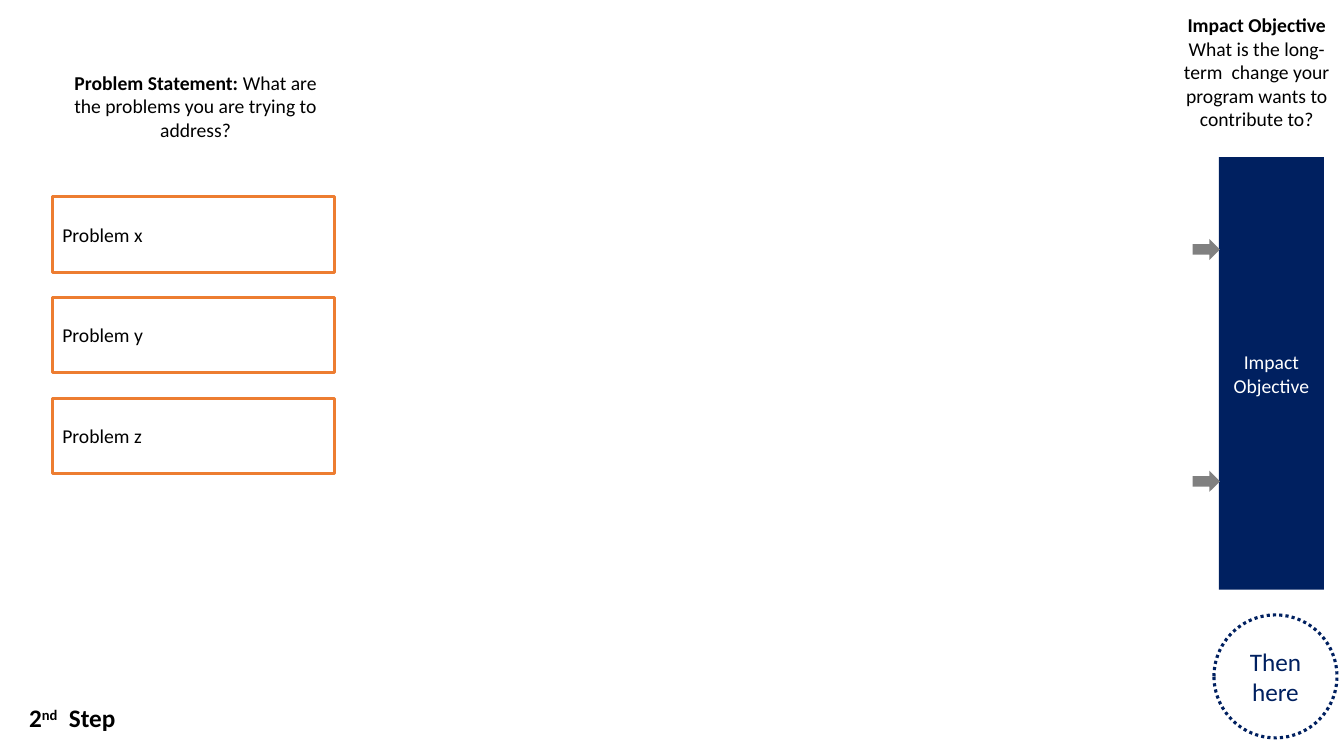
import dataclasses

import pptx
import pptx.dml.color
import pptx.enum.dml
import pptx.enum.shapes
import pptx.enum.text
import pptx.util

Inches = pptx.util.Inches
Shape = pptx.enum.shapes.MSO_SHAPE
Align = pptx.enum.text.PP_ALIGN
Anchor = pptx.enum.text.MSO_ANCHOR


@dataclasses.dataclass(frozen=True)
class Theme:
    font: str = "Calibri"
    navy: str = "002060"
    orange: str = "ED7D31"
    grey: str = "808080"
    black: str = "000000"
    white: str = "FFFFFF"
    body: int = 14
    large: int = 18
    outline: float = 2.25


THEME = Theme()


def rgb(value):
    return pptx.dml.color.RGBColor.from_string(value)


def write(box, spans, size, color, align):
    """Fill a box with one paragraph of (text, bold) spans and return its runs."""
    box.text_frame.word_wrap = True
    para = box.text_frame.paragraphs[0]
    para.alignment = align
    for text, bold in spans:
        span = para.add_run()
        span.text = text
        span.font.name = THEME.font
        span.font.size = pptx.util.Pt(size)
        span.font.bold = bold
        span.font.color.rgb = rgb(color)
    return para.runs


def add_label(page, left, top, width, height, spans, size, align):
    box = page.shapes.add_textbox(Inches(left), Inches(top), Inches(width), Inches(height))
    return write(box, spans, size, THEME.black, align)


def add_block(page, kind, left, top, width, height, fill=None, line=None):
    box = page.shapes.add_shape(kind, Inches(left), Inches(top), Inches(width), Inches(height))
    box.shadow.inherit = False
    box.text_frame.vertical_anchor = Anchor.MIDDLE
    if fill:
        box.fill.solid()
        box.fill.fore_color.rgb = rgb(fill)
    else:
        box.fill.background()
    if line:
        box.line.color.rgb = rgb(line)
        box.line.width = pptx.util.Pt(THEME.outline)
    else:
        box.line.fill.background()
    return box


def add_problems(page, left, top, width):
    # Heading
    heading = [("Problem Statement: ", True), ("What are the problems you are trying to address?", False)]
    add_label(page, left + 0.02, top, width, 1.04, heading, THEME.body, Align.CENTER)

    # Problem boxes, one inch apart
    for row, name in enumerate("xyz"):
        box = add_block(page, Shape.RECTANGLE, left, top + 1.3 + row, width, 0.75, line=THEME.orange)
        write(box, [(f"Problem {name}", False)], THEME.body, THEME.black, Align.LEFT)


def add_impact(page, left, top, width, height):
    # Heading
    heading = [("Impact Objective ", True),
               ("What is the long-term  change your program wants to contribute to?", False)]
    add_label(page, left - 0.59, top - 1.48, 1.93, 1.28, heading, THEME.body, Align.CENTER)

    # Objective bar
    bar = add_block(page, Shape.RECTANGLE, left, top, width, height, fill=THEME.navy)
    write(bar, [("Impact Objective", False)], THEME.body, THEME.white, Align.CENTER)

    # Arrows leading into the bar
    for offset in (0.81, 3.11):
        add_block(page, Shape.RIGHT_ARROW, left - 0.26, top + offset, 0.27, 0.21, fill=THEME.grey)

    # Dotted callout below the bar
    callout = add_block(page, Shape.OVAL, left - 0.05, top + height + 0.25, 1.22, 1.22, line=THEME.navy)
    callout.line.dash_style = pptx.enum.dml.MSO_LINE.ROUND_DOT
    write(callout, [("Then here", False)], THEME.large, THEME.navy, Align.CENTER)


def add_step(page, left, top, width, height):
    spans = [("2", True), ("nd", True), ("  Step", True)]
    runs = add_label(page, left, top, width, height, spans, THEME.large, Align.LEFT)
    # Raise the ordinal ending
    runs[1].font._element.set("baseline", "30000")


def main():
    deck = pptx.Presentation()
    deck.slide_width, deck.slide_height = Inches(13.33), Inches(7.5)
    page = deck.slides.add_slide(deck.slide_layouts[6])
    add_problems(page, 0.52, 0.65, 2.8)
    add_impact(page, 12.09, 1.56, 1.04, 4.29)
    add_step(page, 0.19, 6.92, 1.16, 0.4)
    deck.save("out.pptx")


if __name__ == "__main__":
    main()
